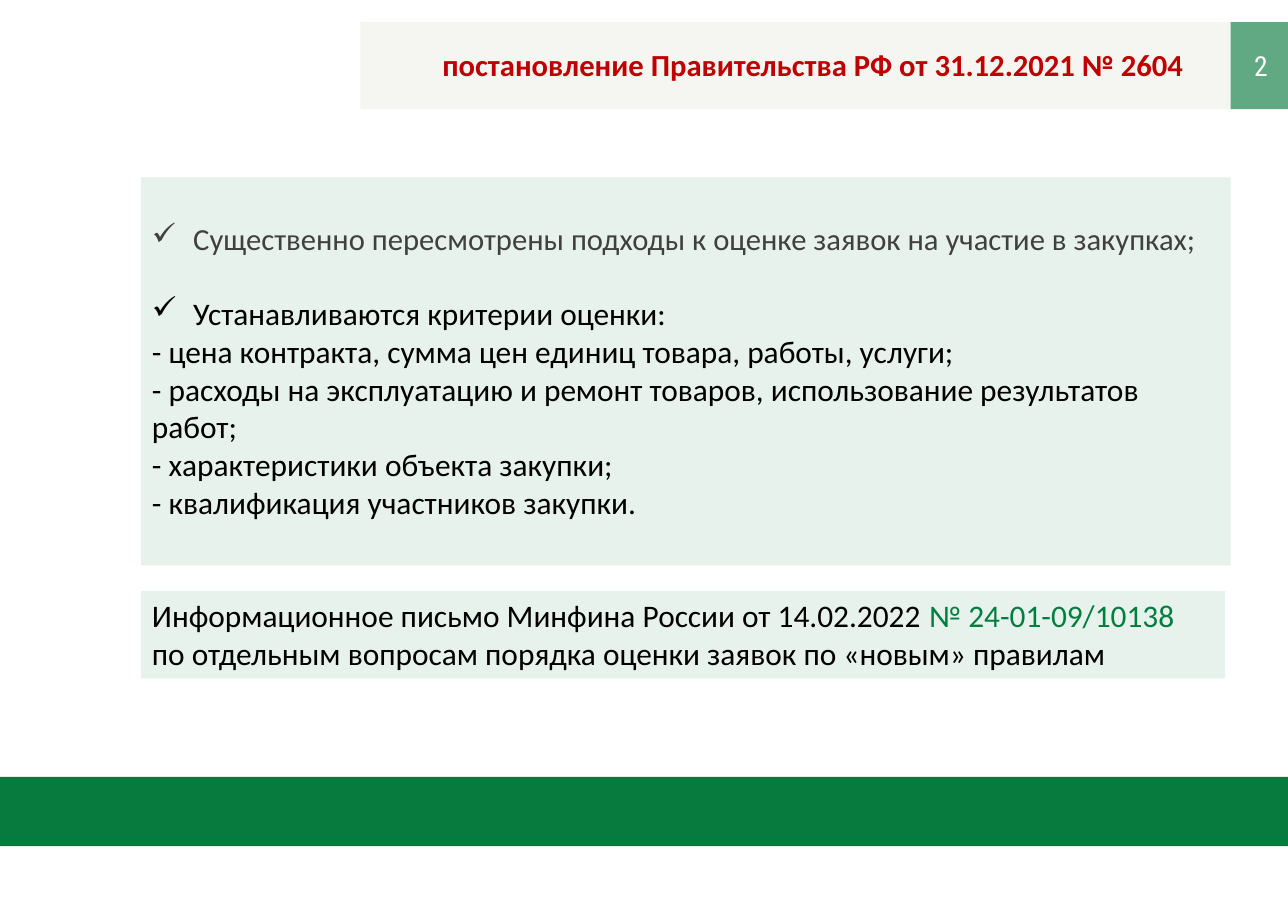
from lxml import etree
from pptx import Presentation
from pptx.dml.color import RGBColor
from pptx.enum import shapes, text
from pptx.oxml import ns
from pptx.util import Pt

GREEN = RGBColor(0x07, 0x7A, 0x3E)
LINK = RGBColor(0x00, 0x7E, 0x40)
MINT = RGBColor(0xE7, 0xF2, 0xEC)
CREAM = RGBColor(0xF5, 0xF6, 0xF1)
RED = RGBColor(0xC0, 0x00, 0x00)
GRAY = RGBColor(0x40, 0x40, 0x40)
BLACK = RGBColor(0x00, 0x00, 0x00)
WHITE = RGBColor(0xFF, 0xFF, 0xFF)

WIDTH, HEIGHT = 841.7, 595.4
LEFT, EDGE = 92.2, 804.2
TOP, HEAD = 14.4, 56.9
LINE, INSET = 24.4, 3.6

CHECKS = [
    ("Существенно пересмотрены подходы к оценке заявок на участие в закупках;", 20, GRAY),
    ("Устанавливаются критерии оценки:", 20.5, BLACK),
]
RULES = [
    "- цена контракта, сумма цен единиц товара, работы, услуги;",
    "- расходы на эксплуатацию и ремонт товаров, использование результатов работ;",
    "- характеристики объекта закупки;",
    "- квалификация участников закупки.",
]


def add_block(slide, x, y, w, h, color):
    block = slide.shapes.add_shape(
        shapes.MSO_SHAPE.RECTANGLE, Pt(x), Pt(y), Pt(w), Pt(h))
    block.shadow.inherit = False
    block.fill.solid()
    block.fill.fore_color.rgb = color
    block.line.fill.background()
    frame = block.text_frame
    frame.word_wrap = True
    frame.vertical_anchor = text.MSO_ANCHOR.TOP
    frame.paragraphs[0].alignment = text.PP_ALIGN.LEFT
    return block


def add_run(para, words, size, color, font="Calibri", bold=False):
    run = para.add_run()
    run.text = words
    run.font.name = font
    run.font.size = Pt(size)
    run.font.bold = bold
    run.font.color.rgb = color


def add_check(para):
    """Give the paragraph a hanging check mark."""
    props = para._p.get_or_add_pPr()
    props.set("marL", str(Pt(27)))
    props.set("indent", str(-Pt(27)))
    etree.SubElement(props, ns.qn("a:buChar"), char="✓")


def fade(block, share):
    """Set the opacity of the fill, in percent."""
    color = block.fill._xPr.find(".//" + ns.qn("a:srgbClr"))
    etree.SubElement(color, ns.qn("a:alpha"), val=str(share * 1000))


def add_head(slide):
    add_block(slide, 235.5, TOP, EDGE - 235.5, HEAD, CREAM)
    title = slide.shapes.title
    title.left, title.top = Pt(258.5), Pt(26.6)
    title.width, title.height = Pt(EDGE - 258.5), Pt(31.7)
    frame = title.text_frame
    frame.word_wrap = True
    frame.auto_size = text.MSO_AUTO_SIZE.NONE
    frame.vertical_anchor = text.MSO_ANCHOR.TOP
    para = frame.paragraphs[0]
    para.alignment = text.PP_ALIGN.CENTER
    add_run(para, "постановление Правительства РФ от 31.12.2021 № 2604",
            20, RED, bold=True)
    slide.shapes._spTree.append(title._element)

    page = add_block(slide, EDGE, TOP, 39.6, HEAD, GREEN)
    fade(page, 64)
    page.text_frame.vertical_anchor = text.MSO_ANCHOR.MIDDLE
    para = page.text_frame.paragraphs[0]
    para.alignment = text.PP_ALIGN.CENTER
    add_run(para, "2", 18, WHITE, "Roboto Condensed")


def add_rules(slide):
    frame = add_block(slide, LEFT, 116, EDGE - LEFT, 253.5, MINT).text_frame
    frame.margin_top = Pt(INSET + LINE)
    para = frame.paragraphs[0]
    for place, (words, size, color) in enumerate(CHECKS):
        if place:
            para = frame.add_paragraph()
            para.alignment = text.PP_ALIGN.LEFT
            para.space_before = Pt(LINE)
        add_check(para)
        add_run(para, words, size, color)
    for words in RULES:
        para = frame.add_paragraph()
        para.alignment = text.PP_ALIGN.LEFT
        add_run(para, words, 20.5, BLACK)


def add_letter(slide):
    block = add_block(slide, LEFT, 386.4, 708.5, 57, MINT)
    para = block.text_frame.paragraphs[0]
    add_run(para, "Информационное письмо Минфина России от 14.02.2022 ", 20.5, BLACK)
    add_run(para, "№ 24-01-09/10138", 20.5, LINK)
    para.add_line_break()
    add_run(para, "по отдельным вопросам порядка оценки заявок по «новым» правилам",
            20.5, BLACK)


def main():
    deck = Presentation()
    deck.slide_width, deck.slide_height = Pt(WIDTH), Pt(HEIGHT)
    slide = deck.slides.add_slide(deck.slide_layouts[5])
    add_head(slide)
    add_rules(slide)
    add_block(slide, 0, 507.8, WIDTH, 45.2, GREEN)
    add_letter(slide)
    deck.save("out.pptx")


if __name__ == "__main__":
    main()
